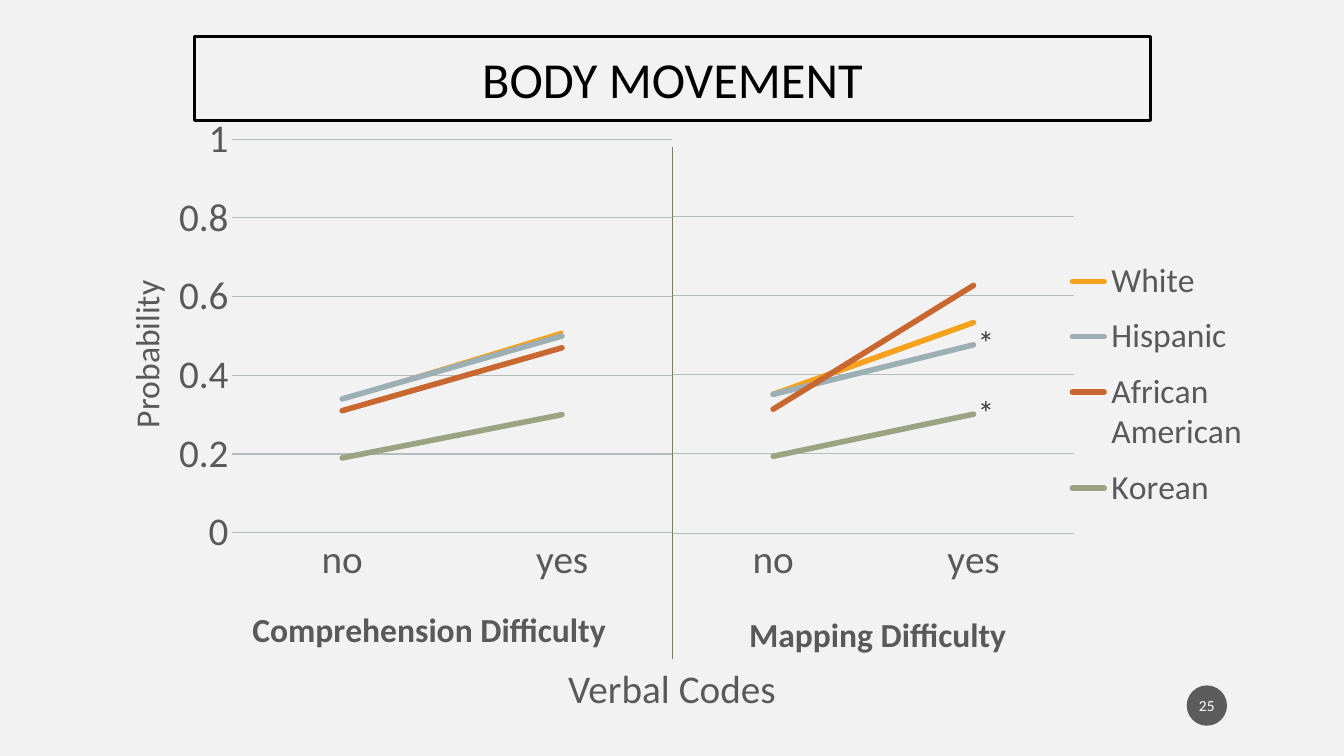
import pptx
import pptx.chart.data
import pptx.dml.color
import pptx.enum.chart
import pptx.enum.shapes
import pptx.enum.text
import pptx.oxml
import pptx.oxml.ns
import pptx.util
from dataclasses import dataclass

Inches, Pt = pptx.util.Inches, pptx.util.Pt
qn = pptx.oxml.ns.qn


@dataclass(frozen=True)
class Theme:
    """Colours, font and type sizes of the slide."""
    font: str = "Calibri"
    background: str = "F2F2F2"
    ink: str = "000000"
    text: str = "595959"
    star: str = "404040"
    badge: str = "1D1D1D"
    white: str = "FFFFFF"
    grid: str = "B4BCBE"
    divider: str = "777F5E"
    series: tuple = ("F6A21D", "9BAFB5", "C96731", "9CA383")
    title_size: int = 36
    axis_size: int = 28
    label_size: int = 24
    badge_size: int = 11


THEME = Theme()


def rgb(value):
    """Return a colour object for a hex string."""
    return pptx.dml.color.RGBColor.from_string(value)


def style_font(font, size, color=THEME.text, bold=False):
    """Apply the theme font with a size, colour and weight."""
    font.name, font.size, font.bold = THEME.font, Pt(size), bold
    font.color.rgb = rgb(color)


def write(tf, text, size, color=THEME.text, bold=False, align=None):
    """Put one formatted run into a text frame."""
    p = tf.paragraphs[0]
    p.alignment = align
    r = p.add_run()
    r.text = text
    style_font(r.font, size, color, bold)


def place_part(element, x, y, w=None, h=None, inner=False):
    """Give a chart part a manual layout in fractions of the chart."""
    for old in element.findall(qn("c:layout")):
        element.remove(old)
    values = [("layoutTarget", "inner")] if inner else []
    values += [("xMode", "edge"), ("yMode", "edge"), ("x", x), ("y", y)]
    if w is not None:
        values += [("w", w), ("h", h)]
    body = "".join(f'<c:{name} val="{value}"/>' for name, value in values)
    layout = pptx.oxml.parse_xml(
        f'<c:layout {pptx.oxml.ns.nsdecls("c")}><c:manualLayout>{body}'
        '</c:manualLayout></c:layout>')
    overlay = element.find(qn("c:overlay"))
    if overlay is None:
        element.insert(0, layout)
    else:
        overlay.addprevious(layout)


def clear_fills(chart):
    """Make the chart and plot areas transparent."""
    space = chart.element
    plot_area = space.find(".//" + qn("c:plotArea"))
    blank = (f'<c:spPr {pptx.oxml.ns.nsdecls("c", "a")}><a:noFill/>'
             '<a:ln><a:noFill/></a:ln></c:spPr>')
    plot_area.append(pptx.oxml.parse_xml(blank))
    space.find(qn("c:txPr")).addprevious(pptx.oxml.parse_xml(blank))


def add_axis_title(axis, text, x, y, bold=False):
    """Add an axis title at a fraction of the chart."""
    title = axis.axis_title
    write(title.text_frame, text, THEME.label_size, bold=bold)
    place_part(axis.axis_title.element if hasattr(title, "element")
               else title.text_frame.paragraphs[0]._p.getparent().getparent().getparent(), x, y)


def format_axes(chart, maximum, step):
    """Format the scale, grid and tick labels of both axes."""
    none = pptx.enum.chart.XL_TICK_MARK.NONE
    for axis in (chart.category_axis, chart.value_axis):
        axis.major_tick_mark = axis.minor_tick_mark = none
        axis.format.line.fill.background()
        style_font(axis.tick_labels.font, THEME.axis_size)
    axis = chart.value_axis
    axis.minimum_scale, axis.maximum_scale, axis.major_unit = 0, maximum, step
    axis.tick_labels.number_format = "General"
    axis.tick_labels.number_format_is_linked = False
    axis.has_major_gridlines = True
    line = axis.major_gridlines.format.line
    line.color.rgb, line.width = rgb(THEME.grid), Pt(0.75)
    val_ax = chart.element.find(".//" + qn("c:valAx"))
    if val_ax.find(qn("c:crossBetween")) is None:
        val_ax.find(qn("c:crosses")).addnext(pptx.oxml.parse_xml(
            f'<c:crossBetween {pptx.oxml.ns.nsdecls("c")} val="between"/>'))


def add_line_chart(slide, box, series, maximum, step, plot, widths):
    """Add a no/yes line chart inside the box."""
    data = pptx.chart.data.CategoryChartData()
    data.categories = ["no", "yes"]
    for name, values in series:
        data.add_series(name, values)
    chart = slide.shapes.add_chart(
        pptx.enum.chart.XL_CHART_TYPE.LINE, *map(Inches, box), data).chart
    chart.has_title = chart.has_legend = False
    style_font(chart.font, THEME.axis_size, THEME.ink)
    chart.plots[0].vary_by_categories = False
    for s, color, width in zip(chart.plots[0].series, THEME.series, widths):
        s.smooth = False
        s.format.line.color.rgb, s.format.line.width = rgb(color), Pt(width)
    for ln in chart.element.findall(f".//{qn('c:ser')}/{qn('c:spPr')}/{qn('a:ln')}"):
        ln.set("cap", "rnd")
    format_axes(chart, maximum, step)
    place_part(chart.element.find(".//" + qn("c:plotArea")), *plot, inner=True)
    clear_fills(chart)
    return chart


def add_comprehension_chart(slide, box):
    """Add the left chart with its probability scale."""
    values = [(0.34, 0.51), (0.34, 0.5), (0.31, 0.47), (0.19, 0.3)]
    series = [(f"Series {i}", v) for i, v in enumerate(values, 1)]
    chart = add_line_chart(slide, box, series, 1, 0.2,
                           (0.246, 0.046, 0.754, 0.711), (2.25, 4, 4, 4))
    add_axis_title(chart.category_axis, "Comprehension Difficulty", 0.27, 0.88, bold=True)
    add_axis_title(chart.value_axis, "Probability", 0.05, 0.29)


def add_mapping_chart(slide, box):
    """Add the right chart with its legend and starred points."""
    series = [("White", (56, 85)), ("Hispanic", (56, 76)),
              ("African American", (50, 100)), ("Korean", (31, 48))]
    chart = add_line_chart(slide, box, series, 159, 32,
                           (0, 0.046, 0.687, 0.712), (4, 4, 4, 4))
    chart.value_axis.visible = False
    add_axis_title(chart.category_axis, "Mapping Difficulty", 0.12, 0.89, bold=True)
    for s in chart.plots[0].series:
        if s.name in ("Hispanic", "Korean"):
            label = s.points[1].data_label
            write(label.text_frame, "*", THEME.label_size, THEME.star)
            label.position = pptx.enum.chart.XL_LABEL_POSITION.RIGHT
    chart.has_legend = True
    legend = chart.legend
    legend.position = pptx.enum.chart.XL_LEGEND_POSITION.RIGHT
    legend.include_in_layout = False
    style_font(legend.font, THEME.label_size)
    place_part(chart.element.find(".//" + qn("c:legend")), 0.66, 0.24, 0.34, 0.5)


def add_title(slide, box):
    """Frame the title placeholder in the box."""
    sp = slide.shapes.title
    sp.left, sp.top, sp.width, sp.height = map(Inches, box)
    sp.line.color.rgb, sp.line.width = rgb(THEME.ink), Pt(2.25)
    tf = sp.text_frame
    tf.word_wrap = True
    tf.auto_size = pptx.enum.text.MSO_AUTO_SIZE.SHAPE_TO_FIT_TEXT
    tf.vertical_anchor = pptx.enum.text.MSO_ANCHOR.MIDDLE
    write(tf, "BODY MOVEMENT", THEME.title_size, THEME.ink,
          align=pptx.enum.text.PP_ALIGN.CENTER)


def add_divider(slide, x, top, bottom):
    """Draw the vertical line between the charts."""
    line = slide.shapes.add_connector(
        pptx.enum.shapes.MSO_CONNECTOR.STRAIGHT, *map(Inches, (x, top, x, bottom)))
    line.line.color.rgb, line.line.width = rgb(THEME.divider), Pt(0.5)
    line.element.spPr.append(pptx.oxml.parse_xml(
        f'<a:effectLst {pptx.oxml.ns.nsdecls("a")}/>'))


def add_caption(slide, box):
    """Add the shared caption below the charts."""
    tf = slide.shapes.add_textbox(*map(Inches, box)).text_frame
    tf.word_wrap = True
    write(tf, "Verbal Codes", THEME.axis_size, align=pptx.enum.text.PP_ALIGN.CENTER)


def add_badge(slide, box):
    """Add the round slide number badge."""
    sp = slide.shapes.add_shape(pptx.enum.shapes.MSO_SHAPE.OVAL, *map(Inches, box))
    sp.shadow.inherit = False
    sp.fill.solid()
    sp.fill.fore_color.rgb = rgb(THEME.badge)
    sp.element.spPr.find(f"{qn('a:solidFill')}/{qn('a:srgbClr')}").append(
        pptx.oxml.parse_xml(f'<a:alpha {pptx.oxml.ns.nsdecls("a")} val="70000"/>'))
    sp.line.fill.background()
    tf = sp.text_frame
    tf.margin_left = tf.margin_right = Inches(0.02)
    tf.vertical_anchor = pptx.enum.text.MSO_ANCHOR.MIDDLE
    write(tf, "25", THEME.badge_size, THEME.white, align=pptx.enum.text.PP_ALIGN.CENTER)


def main():
    """Build and save the slide."""
    prs = pptx.Presentation()
    prs.slide_width, prs.slide_height = Inches(13.33), Inches(7.5)
    slide = prs.slides.add_slide(prs.slide_layouts[5])
    slide.background.fill.solid()
    slide.background.fill.fore_color.rgb = rgb(THEME.background)
    middle, top, width, height = 6.67, 1.13, 5.79, 5.49
    add_divider(slide, middle, 1.46, 6.54)
    add_title(slide, (1.93, 0.42, 9.48, 0.71))
    add_comprehension_chart(slide, (middle - width, top, width, height))
    add_mapping_chart(slide, (middle, top, width, height))
    add_caption(slide, (3, 6.54, 7.33, 0.57))
    add_badge(slide, (11.77, 6.8, 0.4, 0.4))
    prs.save("out.pptx")


if __name__ == "__main__":
    main()
